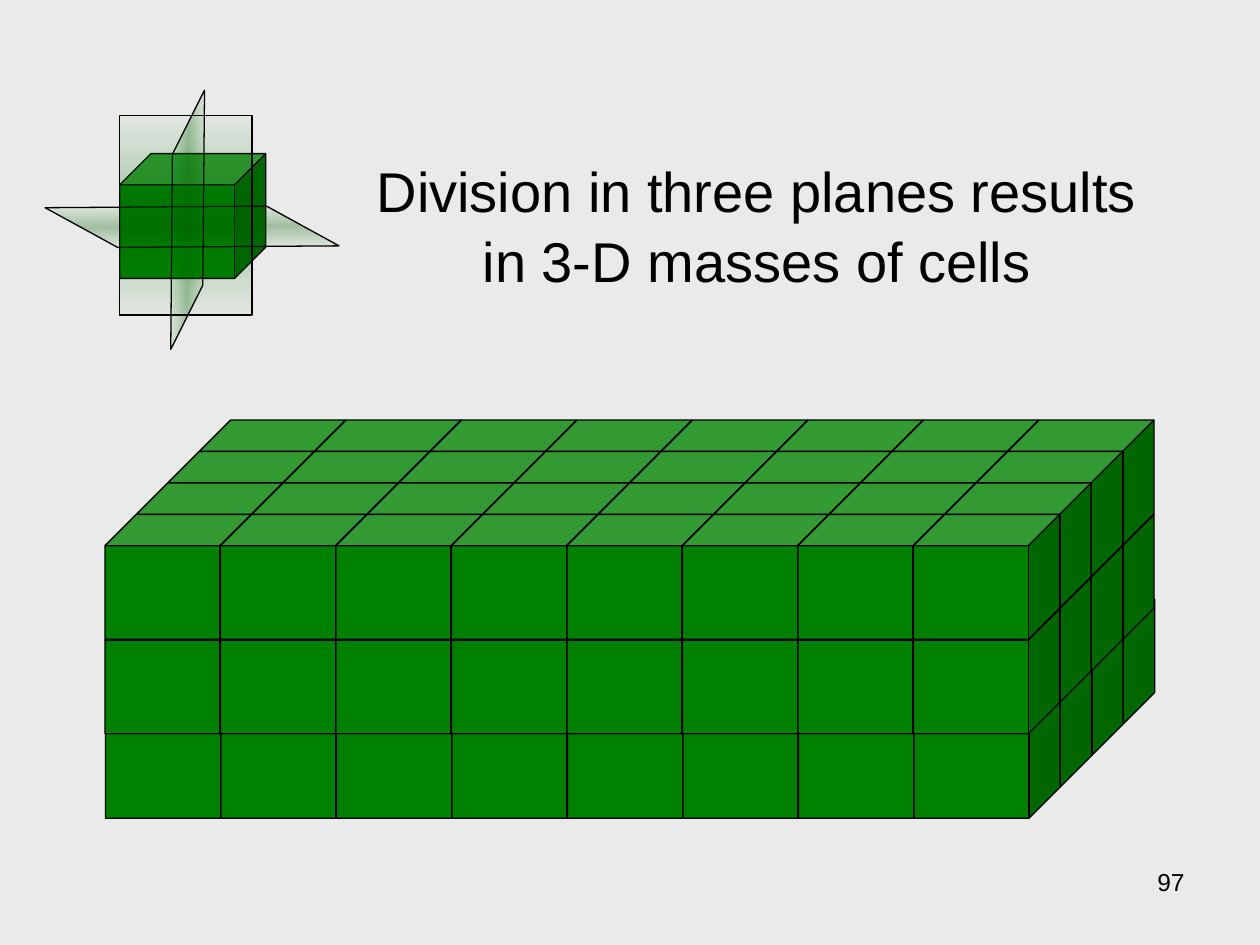
from dataclasses import dataclass
from itertools import product

from lxml.etree import SubElement
from pptx import Presentation
from pptx.dml.color import RGBColor
from pptx.enum.shapes import MSO_SHAPE as Kind
from pptx.enum.text import MSO_ANCHOR as Anchor, MSO_AUTO_SIZE as Fit, PP_ALIGN as Align
from pptx.oxml.ns import qn
from pptx.shapes.autoshape import Shape
from pptx.shapes.group import GroupShape as Group
from pptx.text.text import TextFrame
from pptx.util import Pt

HUES = {"back": "EAEAEA", "cell": "008000", "deep": "005C00", "ink": "000000"}
FONT = "Arial"
CUBE_W, CUBE_H = 83.5, 71.3
COLS, PITCH, STEP = 8, 66, 18  # STEP: shift right and up for each row further back


@dataclass
class Plane:
    kind: Kind
    left: float
    top: float
    width: float
    height: float
    turn: float = 0
    skew: float = 0


@dataclass
class Layer:
    left: float
    top: float


PLANES = [
    Plane(Kind.PARALLELOGRAM, 25.9, 118.1, 167.8, 23, 359.6, 1.795),
    Plane(Kind.PARALLELOGRAM, 33.1, 116.6, 148.3, 18, 90.5, 2.047),
    Plane(Kind.RECTANGLE, 68.4, 66.2, 75.6, 113.8),
]
LAYERS = [Layer(60.3, 396.3), Layer(60, 348), Layer(60, 294)]  # bottom to top


def color(name: str) -> RGBColor:
    return RGBColor.from_string(HUES[name])


def edge(shape: Shape) -> None:
    shape.shadow.inherit = False
    shape.line.color.rgb = color("ink")
    shape.line.width = Pt(0.75)


def add_cube(group: Group, left: float, top: float) -> None:
    cube = group.shapes.add_shape(Kind.CUBE, Pt(left), Pt(top), Pt(CUBE_W), Pt(CUBE_H))
    cube.adjustments[0] = 0.25
    cube.fill.solid()
    cube.fill.fore_color.rgb = color("cell")
    edge(cube)


def glaze(shape: Shape) -> None:
    """Fill with a see-through gradient that is densest in the middle."""
    shape.fill.gradient()
    grad = shape.element.spPr.find(qn("a:gradFill"))
    grad.clear()
    grad.set("rotWithShape", "1")
    stops = SubElement(grad, qn("a:gsLst"))
    for pos, hue, alpha in ((0, "cell", 2), (50, "deep", 31), (100, "cell", 2)):
        stop = SubElement(stops, qn("a:gs"), pos=str(pos * 1000))
        tint = SubElement(stop, qn("a:srgbClr"), val=HUES[hue])
        SubElement(tint, qn("a:alpha"), val=str(alpha * 1000))
    SubElement(grad, qn("a:lin"), ang=str(90 * 60000), scaled="1")


def add_plane(group: Group, plane: Plane) -> None:
    shape = group.shapes.add_shape(
        plane.kind, Pt(plane.left), Pt(plane.top), Pt(plane.width), Pt(plane.height))
    if plane.skew:
        shape.adjustments[0] = plane.skew
        shape.rotation = plane.turn
        shape.element.spPr.xfrm.set("flipH", "1")
    glaze(shape)
    edge(shape)


def write(frame: TextFrame, text: str, size: float, align: Align, anchor: Anchor) -> None:
    frame.word_wrap = True
    frame.vertical_anchor = anchor
    para = frame.paragraphs[0]
    para.alignment = align
    run = para.add_run()
    run.text = text
    run.font.name = FONT
    run.font.size = Pt(size)
    run.font.color.rgb = color("ink")


def main() -> None:
    deck = Presentation()
    deck.slide_width, deck.slide_height = Pt(720), Pt(540)
    slide = deck.slides.add_slide(deck.slide_layouts[5])
    slide.background.fill.solid()
    slide.background.fill.fore_color.rgb = color("back")

    page = slide.shapes.add_textbox(Pt(516), Pt(492), Pt(168), Pt(37.5))
    write(page.text_frame, "97", 14, Align.RIGHT, Anchor.TOP)

    icon = slide.shapes.add_group_shape()
    add_cube(icon, 68.4, 87.8)
    for plane in PLANES:
        add_plane(icon, plane)

    mass = slide.shapes.add_group_shape()
    for layer, pair, col, row in product(LAYERS, (2, 0), range(COLS), (1, 0)):
        shift = (pair + row) * STEP
        add_cube(mass, layer.left + col * PITCH + shift, layer.top - shift)

    title = slide.shapes.title
    title.left, title.top, title.width, title.height = Pt(201), Pt(85.7), Pt(463), Pt(84.2)
    write(title.text_frame, "Division in three planes results in 3-D masses of cells",
          32, Align.CENTER, Anchor.MIDDLE)
    title.text_frame.auto_size = Fit.SHAPE_TO_FIT_TEXT
    title.text_frame.paragraphs[0].line_spacing = 1.05
    slide.shapes.element.append(title.element)

    deck.save("out.pptx")


if __name__ == "__main__":
    main()
